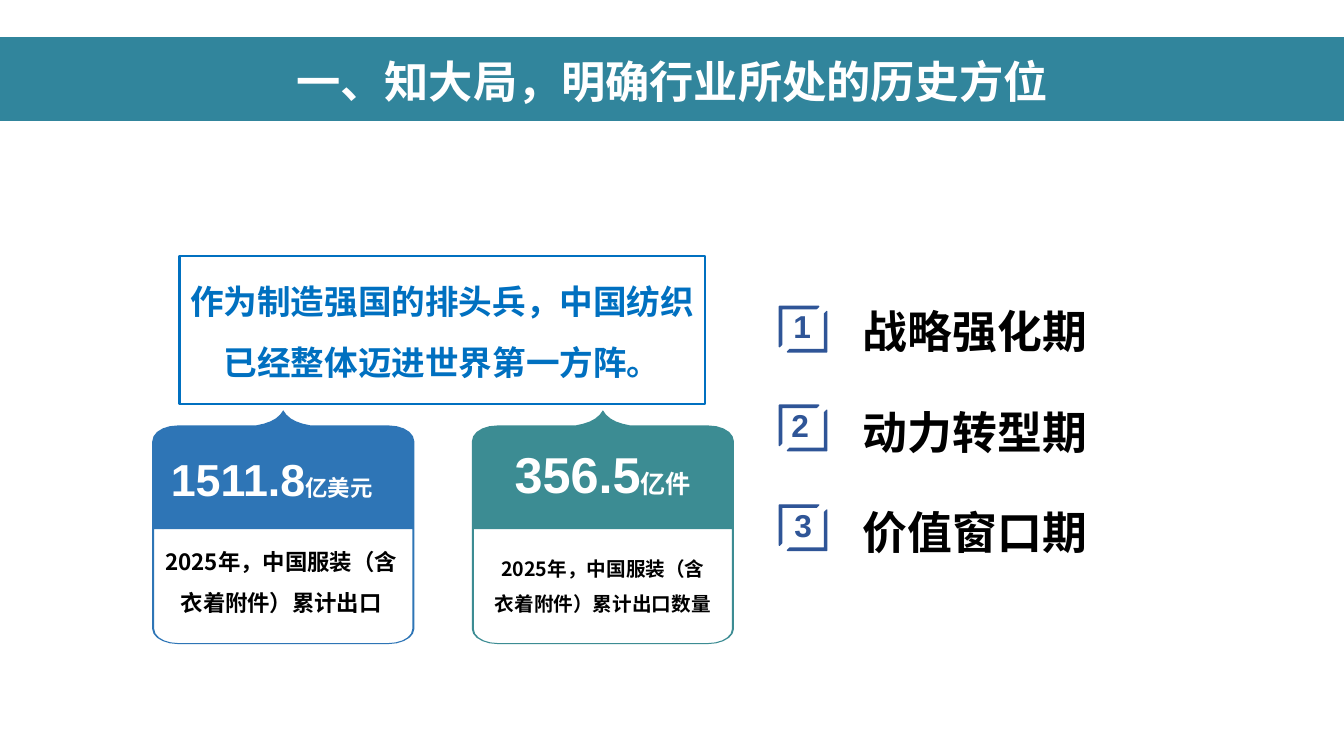
from lxml.etree import SubElement
from pptx import Presentation
from pptx.dml.color import RGBColor
from pptx.enum.shapes import MSO_SHAPE as Kind
from pptx.enum.text import MSO_ANCHOR as Anchor, MSO_AUTO_SIZE as Auto, PP_ALIGN as Align
from pptx.oxml.ns import qn
from pptx.util import Inches, Pt

CJK, LATIN = "Noto Sans CJK SC", "Arial"
COLORS = {"band": "31859C", "badge": "2F5597", "claim": "0070C0", "blue": "2E75B6",
          "teal": "3C8C93", "white": "FFFFFF", "black": "000000"}
COLORS = {name: RGBColor.from_string(code) for name, code in COLORS.items()}


def write(shape, parts, color, align=Align.CENTER, space=1, anchor=Anchor.TOP):
    """Fill a shape with one paragraph of (text, size, font) parts."""
    frame = shape.text_frame
    frame.word_wrap, frame.auto_size = True, Auto.NONE
    frame.vertical_anchor = anchor
    para = frame.paragraphs[0]
    para.alignment, para.line_spacing = align, space
    for text, size, face in parts:
        run = para.add_run()
        run.text = text
        font = run.font
        font.name, font.size, font.bold = face, Pt(size), True
        font.color.rgb = COLORS[color]
        SubElement(font._element, qn("a:ea")).set("typeface", CJK)


def curve(start, one, two, end, steps=5):
    """Points along a cubic curve, both ends included."""
    ts = [i / steps for i in range(steps + 1)]
    return [tuple((1 - t) ** 3 * a + 3 * t * (1 - t) ** 2 * b + 3 * t * t * (1 - t) * c + t ** 3 * d
                  for a, b, c, d in zip(start, one, two, end)) for t in ts]


deck = Presentation()
deck.slide_width, deck.slide_height = Inches(13.33), Inches(7.5)
slide = deck.slides.add_slide(deck.slide_layouts[5])
shapes = slide.shapes

# Title on its band
band = shapes.add_shape(Kind.RECTANGLE, 0, Inches(0.37), Inches(13.33), Inches(0.82))
band.shadow.inherit = False
band.fill.solid()
band.fill.fore_color.rgb = band.line.color.rgb = COLORS["band"]
band.line.width = Pt(1)
title = shapes.title
title.left, title.top, title.width, title.height = 0, Inches(0.49), Inches(13.33), Inches(0.63)
write(title, [("一、知大局，明确行业所处的历史方位", 31.6, CJK)], "white", anchor=Anchor.MIDDLE)
title.element.addprevious(band.element)

# Numbered periods
periods = [("战略强化期", 3.04, 2.96, 7.77), ("动力转型期", 4.02, 3.97, 7.75),
           ("价值窗口期", 5.01, 4.96, 7.78)]
for num, (name, top, label_top, num_left) in enumerate(periods, 1):
    for left, drop, turn in ((7.73, 0, 0), (7.81, 0.05, 180)):
        half = shapes.add_shape(Kind.HALF_FRAME, Inches(left), Inches(top + drop),
                                Inches(0.39), Inches(0.4))
        half.rotation = turn
        half.adjustments[0] = half.adjustments[1] = 0.057
        half.shadow.inherit = False
        half.fill.solid()
        half.fill.fore_color.rgb = half.line.color.rgb = COLORS["badge"]
        half.line.width = Pt(1)
    box = shapes.add_textbox(Inches(num_left), Inches(top - 0.04), Inches(0.37), Inches(0.48))
    write(box, [(str(num), 22.6, LATIN)], "badge")
    box = shapes.add_textbox(Inches(8.46), Inches(label_top), Inches(4.5), Inches(0.64))
    write(box, [(name, 32, CJK)], "black", Align.LEFT)

# Claim box
claim = shapes.add_shape(Kind.RECTANGLE, Inches(1.78), Inches(2.54), Inches(5.21), Inches(1.47))
claim.shadow.inherit = False
claim.fill.background()
claim.line.color.rgb, claim.line.width = COLORS["claim"], Pt(1.5)
write(claim, [("作为制造强国的排头兵，中国纺织已经整体迈进世界第一方阵。", 24, CJK)],
      "claim", space=1.5)

# Right halves of the card outline and its window, mirrored into full rings
WIDE = 2.6
outer = (curve((1.3, 0), (1.34, 0.08), (1.44, 0.13), (1.57, 0.15))
         + curve((2.34, 0.15), (2.49, 0.15), (2.6, 0.22), (2.6, 0.31))
         + curve((2.6, 2.17), (2.6, 2.25), (2.49, 2.32), (2.34, 2.32)))
inner = [(2.58, 1.18)] + curve((2.58, 2.17), (2.58, 2.25), (2.47, 2.31), (2.34, 2.31))
rings = [half + [(WIDE - x, y) for x, y in reversed(half)] for half in (outer, inner)]
FINE = 1000  # outline units per inch
rings = [[(x * FINE, y * FINE) for x, y in ring] for ring in rings]

# Cards: left, colour, figure, unit, figure box, note, note box
cards = [
    (1.51, "blue", ("1511.8", 32), ("亿美元", 16), (1.28, 4.43, 2.83, 0.64),
     ("2025年，中国服装（含衣着附件）累计出口", 16), (1.51, 5.26, 2.56, 1.04)),
    (4.68, "teal", ("356.5", 36), ("亿件", 18), (4.68, 4.35, 2.6, 0.71),
     ("2025年，中国服装（含衣着附件）累计出口数量", 14), (4.78, 5.36, 2.4, 1.04)),
]
for left, color, figure, unit, head, note, body in cards:
    pen = shapes.build_freeform(*rings[0][0], scale=Inches(1) / FINE)
    pen.add_line_segments(rings[0][1:])
    pen.move_to(*rings[1][0])
    pen.add_line_segments(rings[1][1:])
    card = pen.convert_to_shape(Inches(left), Inches(4.07))
    card.shadow.inherit = False
    card.fill.solid()
    card.fill.fore_color.rgb = COLORS[color]
    card.line.fill.background()
    box = shapes.add_textbox(*map(Inches, head))
    write(box, [(*figure, LATIN), (*unit, LATIN)], "white")
    box = shapes.add_textbox(*map(Inches, body))
    write(box, [(*note, CJK)], "black", space=1.5)

deck.save("out.pptx")
